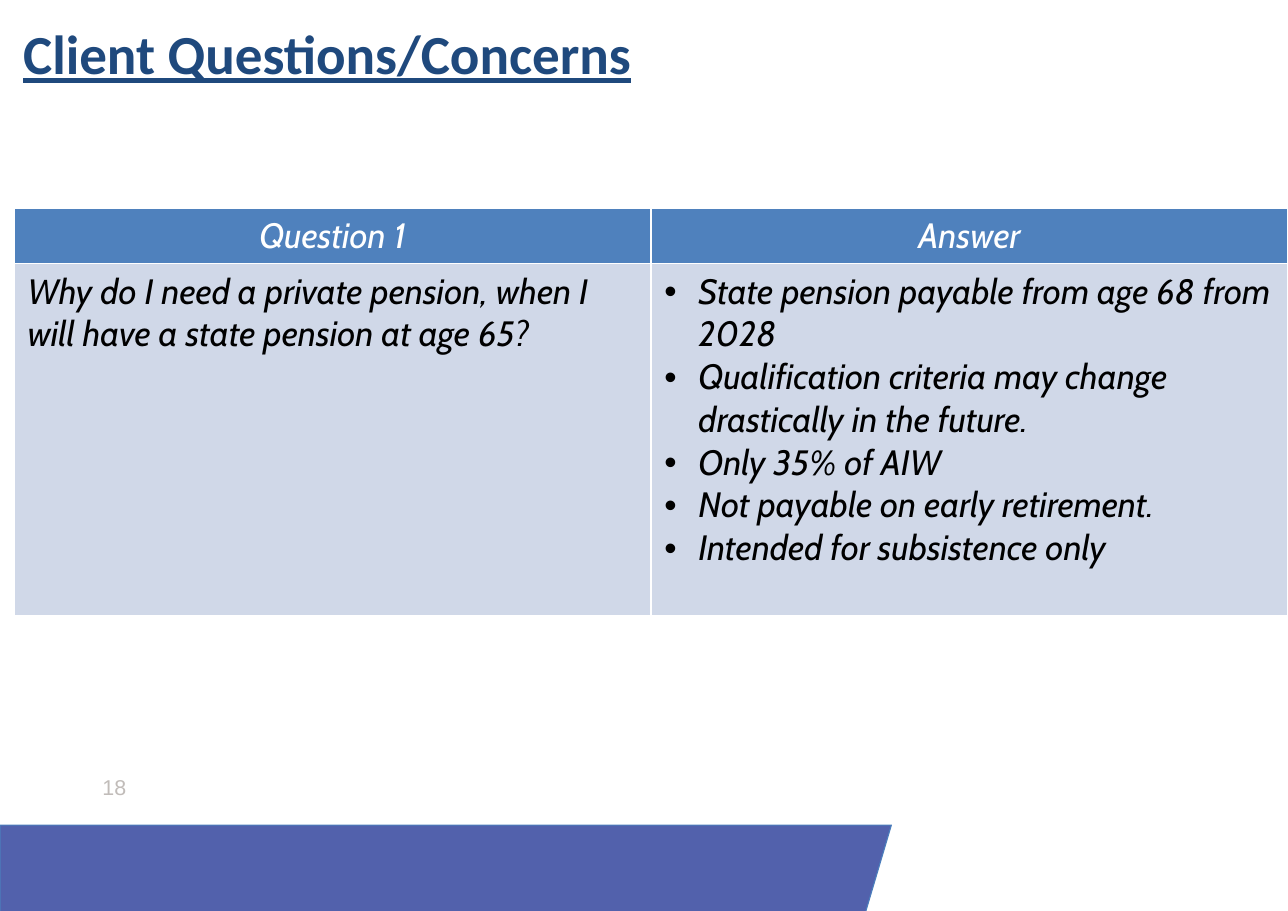
from dataclasses import dataclass

from lxml import etree
from pptx import Presentation
from pptx.dml.color import RGBColor
from pptx.enum.text import MSO_ANCHOR, MSO_AUTO_SIZE, PP_ALIGN
from pptx.oxml.ns import qn
from pptx.util import Inches, Pt

LEFT, CENTER = PP_ALIGN.LEFT, PP_ALIGN.CENTER
TOP = MSO_ANCHOR.TOP
NO_FIT = MSO_AUTO_SIZE.NONE
TITLE_ONLY = 5


@dataclass(frozen=True)
class TextStyle:
    font: str
    size: float
    color: str
    bold: bool = False
    italic: bool = False
    underline: bool = False


@dataclass(frozen=True)
class Theme:
    title: TextStyle = TextStyle("Calibri", 36, "1F497D", bold=True, underline=True)
    number: TextStyle = TextStyle("Arial", 14, "C1BCB9")
    header: TextStyle = TextStyle("Cabin", 23, "FFFFFF", italic=True)
    body: TextStyle = TextStyle("Cabin", 23, "000000", italic=True)
    header_fill: str = "4F81BD"
    body_fill: str = "D0D8E8"
    border: str = "FFFFFF"
    band_fill: str = "5261AC"
    band_line: str = "4B7EBC"


@dataclass(frozen=True)
class CellSpec:
    row: int
    column: int
    lines: tuple[str, ...]
    style: TextStyle
    fill: str
    align: PP_ALIGN = LEFT
    bulleted: bool = False


THEME = Theme()

CELLS = (
    CellSpec(0, 0, ("Question 1",), THEME.header, THEME.header_fill, CENTER),
    CellSpec(0, 1, ("Answer",), THEME.header, THEME.header_fill, CENTER),
    CellSpec(
        1, 0,
        ("Why do I need a private pension, when I will have a state pension at age 65?",),
        THEME.body, THEME.body_fill,
    ),
    CellSpec(
        1, 1,
        (
            "State pension payable from age 68 from 2028",
            "Qualification criteria may change drastically in the future.",
            "Only 35% of AIW",
            "Not payable on early retirement.",
            "Intended for subsistence only",
        ),
        THEME.body, THEME.body_fill, bulleted=True,
    ),
)


def add_span(para, text: str, style: TextStyle) -> None:
    span = para.add_run()
    span.text = text
    font = span.font
    font.name = style.font
    font.size = Pt(style.size)
    font.bold = style.bold
    font.italic = style.italic
    font.underline = style.underline
    font.color.rgb = RGBColor.from_string(style.color)


def add_bullet(para) -> None:
    properties = para._p.get_or_add_pPr()
    properties.set("marL", str(Inches(0.31)))
    properties.set("indent", str(-Inches(0.31)))
    etree.SubElement(properties, qn("a:buFont"), typeface="Arial")
    etree.SubElement(properties, qn("a:buChar"), char="•")


def set_margins(target, horizontal: float, vertical: float) -> None:
    target.margin_left = target.margin_right = Inches(horizontal)
    target.margin_top = target.margin_bottom = Inches(vertical)


def add_borders(cell) -> None:
    properties = cell._tc.get_or_add_tcPr()
    for index, side in enumerate(("lnL", "lnR", "lnT", "lnB")):
        line = etree.Element(qn(f"a:{side}"), w=str(Pt(1)))
        fill = etree.SubElement(line, qn("a:solidFill"))
        etree.SubElement(fill, qn("a:srgbClr"), val=THEME.border)
        properties.insert(index, line)


def fill_cell(table, item: CellSpec) -> None:
    cell = table.cell(item.row, item.column)
    cell.fill.solid()
    cell.fill.fore_color.rgb = RGBColor.from_string(item.fill)
    cell.vertical_anchor = TOP
    set_margins(cell, 0.12, 0.06)
    add_borders(cell)
    frame = cell.text_frame
    for index, text in enumerate(item.lines):
        para = frame.paragraphs[0] if index == 0 else frame.add_paragraph()
        para.alignment = item.align
        if item.bulleted:
            add_bullet(para)
        add_span(para, text, item.style)


def add_band(page) -> None:
    builder = page.shapes.build_freeform(0, Inches(7.49))
    corners = ((8.09, 7.49), (7.85, 8.3), (0, 8.3))
    builder.add_line_segments([(Inches(x), Inches(y)) for x, y in corners], close=True)
    band = builder.convert_to_shape()
    band.shadow.inherit = False
    band.fill.solid()
    band.fill.fore_color.rgb = RGBColor.from_string(THEME.band_fill)
    band.line.color.rgb = RGBColor.from_string(THEME.band_line)
    band.line.width = Pt(0.75)


def add_page_number(page) -> None:
    box = page.shapes.add_textbox(Inches(0.82), Inches(6.97), Inches(0.47), Inches(0.35))
    frame = box.text_frame
    frame.word_wrap = False
    set_margins(frame, 0.11, 0.06)
    add_span(frame.paragraphs[0], "18", THEME.number)


def add_title(page) -> None:
    title = page.shapes.title
    title.left, title.top = Inches(0.1), Inches(0.12)
    title.width, title.height = Inches(9.94), Inches(1.38)
    frame = title.text_frame
    frame.auto_size = NO_FIT
    frame.word_wrap = True
    frame.vertical_anchor = TOP
    set_margins(frame, 0.11, 0.06)
    para = frame.paragraphs[0]
    para.alignment = LEFT
    add_span(para, "Client Questions/Concerns", THEME.title)


def add_question_table(page) -> None:
    table = page.shapes.add_table(
        2, 2, Inches(0.13), Inches(1.89), Inches(11.56), Inches(3.7)
    ).table
    table.rows[0].height = Inches(0.5)
    table.rows[1].height = Inches(3.2)
    for item in CELLS:
        fill_cell(table, item)


def main() -> None:
    deck = Presentation()
    deck.slide_width, deck.slide_height = Inches(11.69), Inches(8.27)
    page = deck.slides.add_slide(deck.slide_layouts[TITLE_ONLY])
    add_band(page)
    add_page_number(page)
    add_title(page)
    add_question_table(page)
    deck.save("out.pptx")


if __name__ == "__main__":
    main()
